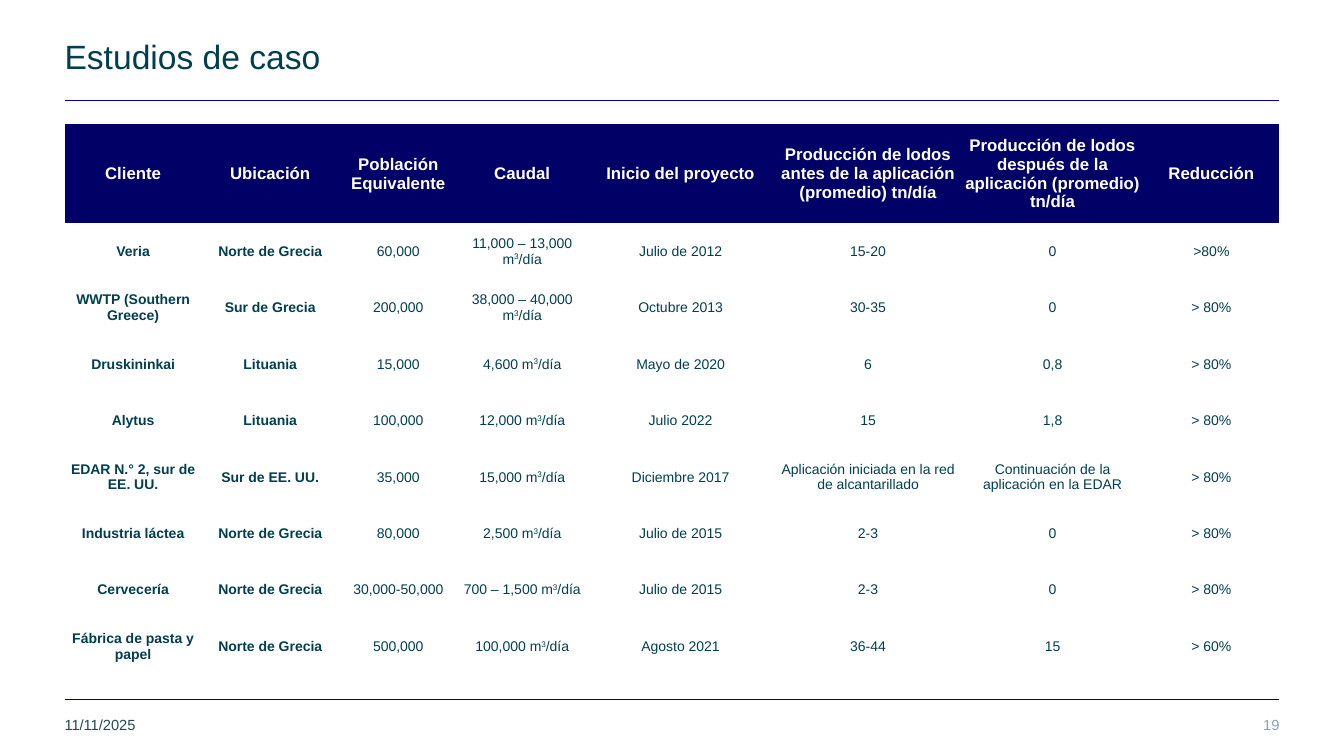
import dataclasses

import pptx
import pptx.dml.color
import pptx.enum.shapes
import pptx.enum.text
import pptx.oxml.ns
import pptx.util
from lxml import etree

PX = 9144
LEFT, WIDTH = 64, 1205
ALIGN = pptx.enum.text.PP_ALIGN
ANCHOR = pptx.enum.text.MSO_ANCHOR
NO_STYLE = "{2D5ABB26-0587-4C30-8999-92F81FD0307C}"


@dataclasses.dataclass(frozen=True)
class Theme:
    font: str = "Arial"
    ink: str = "013F4F"
    rule: str = "000099"
    header: str = "000066"
    white: str = "FFFFFF"
    date: str = "234855"
    number: str = "80A8B6"
    title_size: float = 24
    header_size: float = 12
    body_size: float = 10
    footer_size: float = 10.5
    rule_width: float = 0.5


THEME = Theme()
COLUMN_WIDTHS = [136, 136, 118, 128, 186, 186, 180, 135]
HEADER_HEIGHT, ROW_HEIGHT = 98, 56
HEADERS = [
    "Cliente", "Ubicación", "Población Equivalente", "Caudal", "Inicio del proyecto",
    "Producción de lodos antes de la aplicación (promedio) tn/día",
    "Producción de lodos después de la aplicación (promedio) tn/día", "Reducción",
]
CASES = [
    ["Veria", "Norte de Grecia", "60,000", "11,000 – 13,000 m^3^/día",
     "Julio de 2012", "15-20", "0", ">80%"],
    ["WWTP (Southern Greece)", "Sur de Grecia", "200,000", "38,000 – 40,000 m^3^/día",
     "Octubre 2013", "30-35", "0", "> 80%"],
    ["Druskininkai", "Lituania", "15,000", "4,600 m^3^/día",
     "Mayo de 2020", "6", "0,8", "> 80%"],
    ["Alytus", "Lituania", "100,000", "12,000 m^3^/día",
     "Julio 2022", "15", "1,8", "> 80%"],
    ["EDAR N.° 2, sur de EE. UU.", "Sur de EE. UU.", "35,000", "15,000 m^3^/día",
     "Diciembre 2017", "Aplicación iniciada en la red de alcantarillado",
     "Continuación de la aplicación en la EDAR", "> 80%"],
    ["Industria láctea", "Norte de Grecia", "80,000", "2,500 m^3^/día",
     "Julio de 2015", "2-3", "0", "> 80%"],
    ["Cervecería", "Norte de Grecia", "30,000-50,000", "700 – 1,500 m^3^/día",
     "Julio de 2015", "2-3", "0", "> 80%"],
    ["Fábrica de pasta y papel", "Norte de Grecia", "500,000", "100,000 m^3^/día",
     "Agosto 2021", "36-44", "15", "> 60%"],
]


def px(*lengths):
    return [pptx.util.Emu(length * PX) for length in lengths]


def rgb(color):
    return pptx.dml.color.RGBColor.from_string(color)


def write(frame, text, *, size, color, bold=False, align=ALIGN.LEFT,
          anchor=ANCHOR.TOP, spacing=None):
    frame.word_wrap = True
    frame.vertical_anchor = anchor
    para = frame.paragraphs[0]
    para.alignment = align
    para.line_spacing = spacing
    for index, part in enumerate(text.split("^")):
        span = para.add_run()
        span.text = part
        span.font.name = THEME.font
        span.font.size = pptx.util.Pt(size)
        span.font.bold = bold
        span.font.color.rgb = rgb(color)
        if index % 2:
            span.font._element.set("baseline", "30000")


def clear_margins(frame):
    frame.margin_left = frame.margin_top = frame.margin_right = frame.margin_bottom = 0


def add_title(page, text):
    title = page.shapes.title
    title.left, title.top, title.width, title.height = px(LEFT, 40, WIDTH, 59)
    clear_margins(title.text_frame)
    write(title.text_frame, text, size=THEME.title_size, color=THEME.ink, spacing=0.9)


def add_rule(page, top):
    rule = page.shapes.add_connector(
        pptx.enum.shapes.MSO_CONNECTOR.STRAIGHT, *px(LEFT, top, LEFT + WIDTH, top))
    rule.line.color.rgb = rgb(THEME.rule)
    rule.line.width = pptx.util.Pt(THEME.rule_width)
    etree.SubElement(rule._element.spPr, pptx.oxml.ns.qn("a:effectLst"))


def add_footer(page, left, text, **text_format):
    box = page.shapes.add_textbox(*px(left, 710, 300, 25))
    clear_margins(box.text_frame)
    write(box.text_frame, text, size=THEME.footer_size, **text_format)


def fill_cell(cell, text, *, fill=None, **text_format):
    cell.margin_left, cell.margin_top, cell.margin_right, cell.margin_bottom = px(1, 1, 1, 0)
    cell.vertical_anchor = ANCHOR.MIDDLE
    if fill:
        cell.fill.solid()
        cell.fill.fore_color.rgb = rgb(fill)
    else:
        cell.fill.background()
    write(cell.text_frame, text, align=ALIGN.CENTER, anchor=ANCHOR.MIDDLE, **text_format)


def add_case_table(page):
    heights = [HEADER_HEIGHT] + [ROW_HEIGHT] * len(CASES)
    frame = page.shapes.add_table(
        len(heights), len(HEADERS), *px(LEFT, 123, WIDTH, sum(heights)))
    table = frame.table
    table.horz_banding = False
    table._tbl.tblPr.find(pptx.oxml.ns.qn("a:tableStyleId")).text = NO_STYLE
    for column, width in zip(table.columns, px(*COLUMN_WIDTHS)):
        column.width = width
    for row, height in zip(table.rows, px(*heights)):
        row.height = height
    for column, text in enumerate(HEADERS):
        fill_cell(table.cell(0, column), text, fill=THEME.header,
                  size=THEME.header_size, color=THEME.white, bold=True)
    for row, case in enumerate(CASES, start=1):
        for column, text in enumerate(case):
            fill_cell(table.cell(row, column), text,
                      size=THEME.body_size, color=THEME.ink, bold=column < 2)


def main():
    deck = pptx.Presentation()
    deck.slide_width, deck.slide_height = px(1333, 750)
    page = deck.slides.add_slide(deck.slide_layouts[5])
    for top in (694, 100):
        add_rule(page, top)
    add_title(page, "Estudios de caso")
    add_case_table(page)
    add_footer(page, LEFT, "11/11/2025", color=THEME.date)
    add_footer(page, LEFT + WIDTH - 300, "19", color=THEME.number, align=ALIGN.RIGHT)
    deck.save("out.pptx")


if __name__ == "__main__":
    main()
